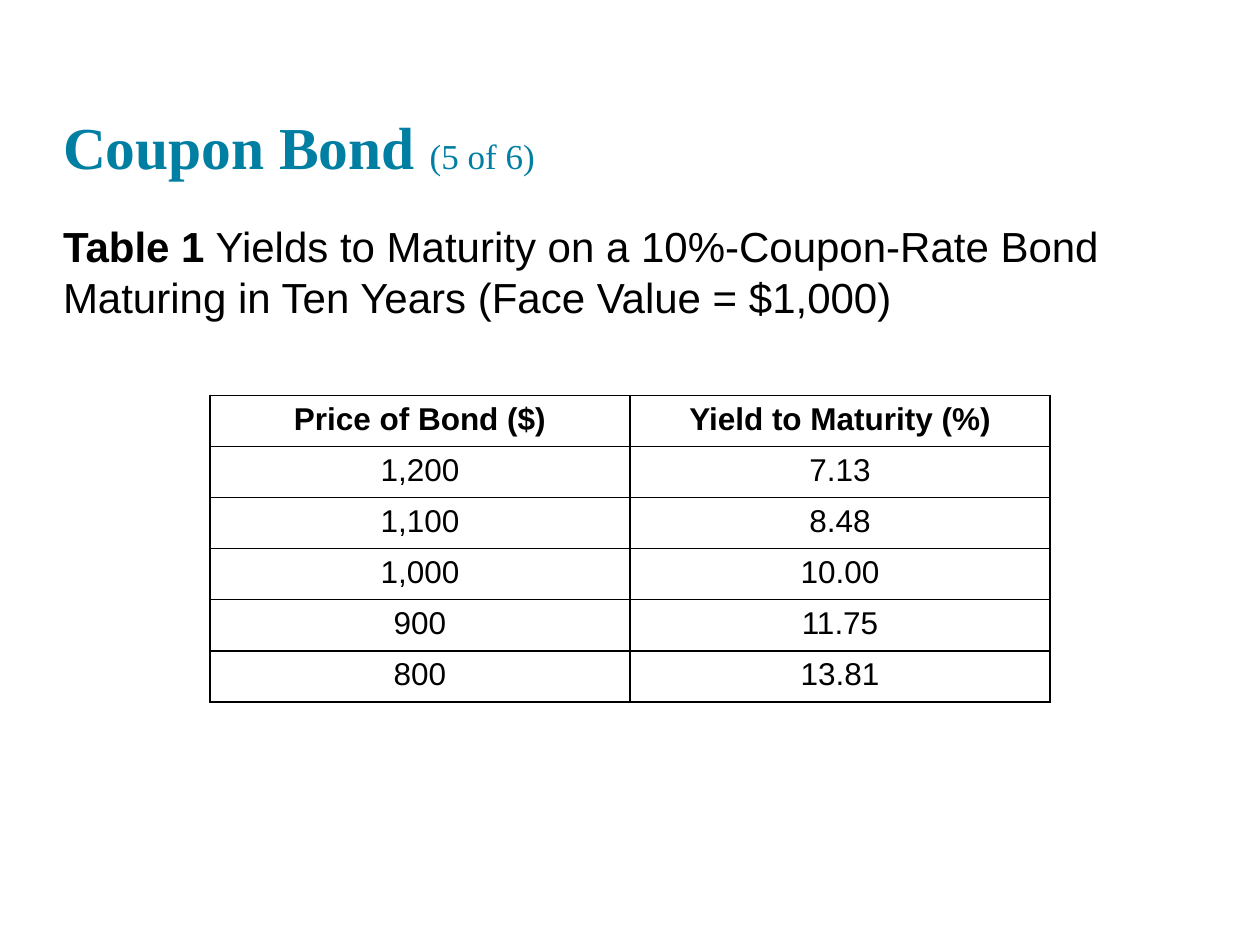
import pptx
import pptx.util
import pptx.dml.color
import pptx.enum.text
import pptx.oxml.ns
import lxml.etree

Cm = pptx.util.Cm
ALIGN = pptx.enum.text.PP_ALIGN
ANCHOR = pptx.enum.text.MSO_ANCHOR


def colour(value):
    return pptx.dml.color.RGBColor.from_string(value)


def add_text(para, text, size=18, font="Arial", color="000000", bold=False):
    span = para.add_run()
    span.text = text
    span.font.size = pptx.util.Pt(size)
    span.font.name = font
    span.font.bold = bold
    span.font.color.rgb = colour(color)


deck = pptx.Presentation()
deck.slide_width = Cm(25.4)
deck.slide_height = Cm(19.05)
page = deck.slides.add_slide(deck.slide_layouts[1])
title, caption = page.placeholders

for box, top, height, anchor in [
    (title, 0.61, 3.05, ANCHOR.BOTTOM),
    (caption, 4.45, 2.11, ANCHOR.TOP),
]:
    box.left, box.top, box.width, box.height = Cm(1.27), Cm(top), Cm(22.86), Cm(height)
    frame = box.text_frame
    frame.margin_left = frame.margin_top = frame.margin_right = frame.margin_bottom = 0
    frame.word_wrap = True
    frame.auto_size = pptx.enum.text.MSO_AUTO_SIZE.NONE
    frame.vertical_anchor = anchor
    para = frame.paragraphs[0]
    para.alignment = ALIGN.LEFT
    para.space_before = pptx.util.Pt(0)

para = title.text_frame.paragraphs[0]
heading = {"font": "Times New Roman", "color": "007FA3"}
add_text(para, "Coupon Bond ", size=34, bold=True, **heading)
add_text(para, "(5 of 6)", size=20, **heading)

para = caption.text_frame.paragraphs[0]
properties = para._p.get_or_add_pPr()
properties.set("marL", "0")
properties.set("indent", "0")
lxml.etree.SubElement(properties, pptx.oxml.ns.qn("a:buNone"))
add_text(para, "Table 1", size=24, bold=True)
add_text(
    para,
    " Yields to Maturity on a 10%-Coupon-Rate Bond Maturing in Ten Years (Face Value = $1,000)",
    size=24,
)

rows = [
    ("Price of Bond ($)", "Yield to Maturity (%)"),
    ("1,200", "7.13"),
    ("1,100", "8.48"),
    ("1,000", "10.00"),
    ("900", "11.75"),
    ("800", "13.81"),
]
table = page.shapes.add_table(
    len(rows), 2, Cm(4.23), Cm(7.97), Cm(16.94), Cm(6.18)
).table
table.horz_banding = False

for row_index, row in enumerate(rows):
    table.rows[row_index].height = Cm(1.03)
    for column_index, text in enumerate(row):
        cell = table.cell(row_index, column_index)
        para = cell.text_frame.paragraphs[0]
        para.alignment = ALIGN.CENTER
        add_text(para, text, bold=row_index == 0)
        cell_properties = cell._tc.get_or_add_tcPr()
        for side in ("lnL", "lnR", "lnT", "lnB"):
            border = lxml.etree.SubElement(
                cell_properties, pptx.oxml.ns.qn("a:" + side), w="12700"
            )
            fill = lxml.etree.SubElement(border, pptx.oxml.ns.qn("a:solidFill"))
            lxml.etree.SubElement(fill, pptx.oxml.ns.qn("a:srgbClr"), val="000000")
        cell.fill.solid()
        cell.fill.fore_color.rgb = colour("FFFFFF")

deck.save("out.pptx")
